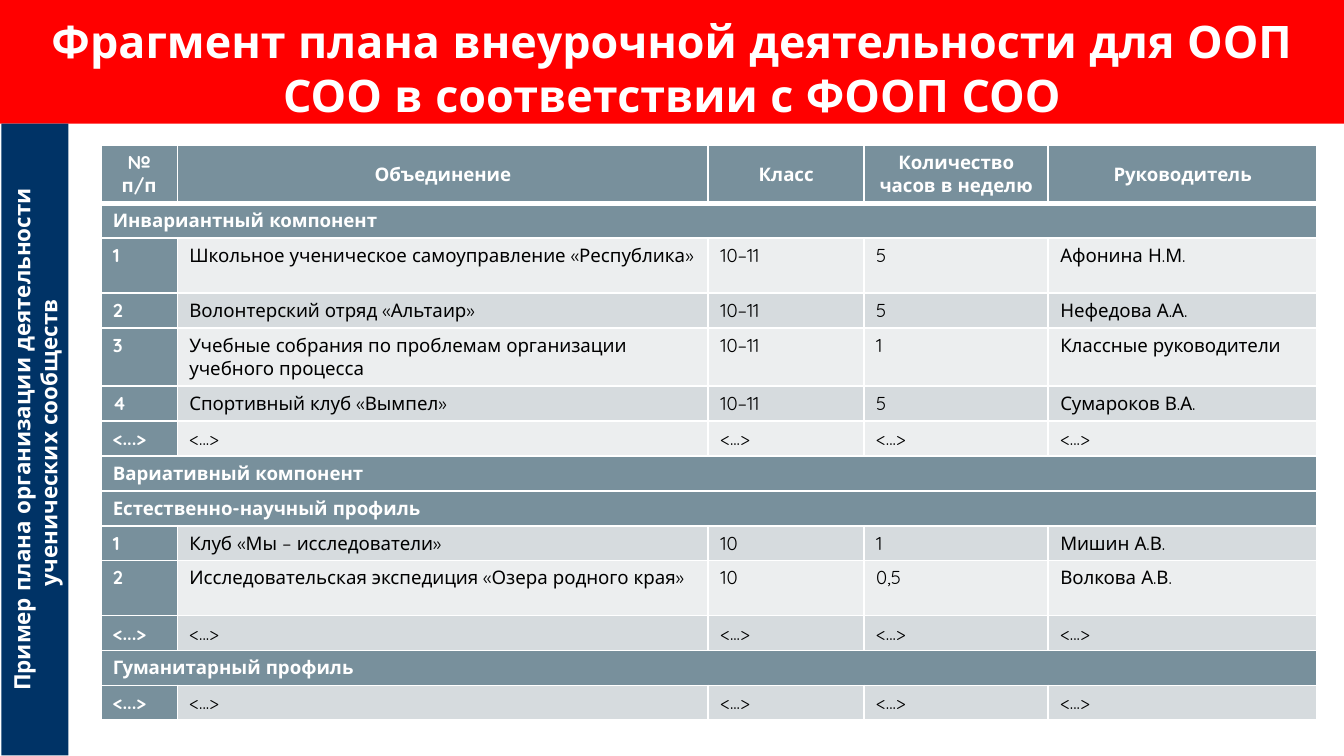
from lxml.etree import SubElement
from pptx import Presentation
from pptx.dml.color import RGBColor
from pptx.enum.shapes import MSO_SHAPE
from pptx.enum.text import MSO_ANCHOR, PP_ALIGN
from pptx.oxml.ns import qn
from pptx.util import Inches, Pt

RED = RGBColor(0xFF, 0x00, 0x00)
NAVY = RGBColor(0x00, 0x33, 0x66)
SLATE = RGBColor(0x78, 0x90, 0x9C)
LIGHT = RGBColor(0xEC, 0xEE, 0xEF)
MEDIUM = RGBColor(0xD6, 0xDB, 0xDE)
WHITE = RGBColor(0xFF, 0xFF, 0xFF)
BLACK = RGBColor(0x00, 0x00, 0x00)
FONT = "Quicksand"

TITLE = "Фрагмент плана внеурочной деятельности для ООП СОО в соответствии с ФООП СОО"
SIDEBAR = "Пример плана организации деятельности ученических сообществ "
GAP = ["<...>"] * 5
ROWS = [
    ["№ п/п", "Объединение", "Класс", "Количество часов в неделю", "Руководитель"],
    ["Инвариантный компонент"],
    ["1", "Школьное ученическое самоуправление «Республика»", "10–11", "5", "Афонина Н.М."],
    ["2", "Волонтерский отряд «Альтаир»", "10–11", "5", "Нефедова А.А."],
    ["3", "Учебные собрания по проблемам организации учебного процесса", "10–11", "1",
     "Классные руководители"],
    ["4", "Спортивный клуб «Вымпел»", "10–11", "5", "Сумароков В.А."],
    GAP,
    ["Вариативный компонент"],
    ["Естественно-научный профиль"],
    ["1", "Клуб «Мы – исследователи»", "10", "1", "Мишин А.В."],
    ["2", "Исследовательская экспедиция «Озера родного края»", "10", "0,5", "Волкова А.В."],
    GAP,
    ["Гуманитарный профиль"],
    GAP,
]
COLUMN_WIDTHS = [0.57, 3.95, 1.16, 1.37, 2]
TALL_ROWS = {0, 2, 4, 10}


def write_text(frame, text, size, color=WHITE, bold=True, align=PP_ALIGN.CENTER):
    """Write one formatted run into the first paragraph of a text frame."""
    paragraph = frame.paragraphs[0]
    paragraph.alignment = align
    run = paragraph.add_run()
    run.text = text
    run.font.name = FONT
    run.font.size = Pt(size)
    run.font.bold = bold
    run.font.color.rgb = color


def add_panel(slide, left, top, width, height, color):
    """Add a plain filled rectangle and return it."""
    shape = slide.shapes.add_shape(
        MSO_SHAPE.RECTANGLE, Inches(left), Inches(top), Inches(width), Inches(height))
    shape.shadow.inherit = False
    shape.fill.solid()
    shape.fill.fore_color.rgb = color
    shape.line.fill.background()
    shape.text_frame.word_wrap = True
    return shape


def add_title(slide, left, top, width, height):
    """Add the title band across the top."""
    frame = add_panel(slide, left, top, width, height, RED).text_frame
    frame.margin_left = frame.margin_right = Inches(0.1)
    frame.margin_top = frame.margin_bottom = Inches(0.1)
    frame.vertical_anchor = MSO_ANCHOR.TOP
    write_text(frame, TITLE, 24)


def add_sidebar(slide, left, top, width, height):
    """Add the vertical band, read from bottom to top, filling the given box."""
    shift = (height - width) / 2
    shape = add_panel(slide, left - shift, top + shift, height, width, NAVY)
    shape.rotation = 270
    shape.text_frame.vertical_anchor = MSO_ANCHOR.MIDDLE
    write_text(shape.text_frame, SIDEBAR, 12)


def set_borders(cell, bottom):
    """Draw white borders around a cell, with the given bottom width in points."""
    properties = cell._tc.get_or_add_tcPr()
    widths = {"a:lnL": 1, "a:lnR": 1, "a:lnT": 1, "a:lnB": bottom}
    for position, (tag, width) in enumerate(widths.items()):
        line = SubElement(properties, qn(tag), w=str(Pt(width)))
        fill = SubElement(line, qn("a:solidFill"))
        SubElement(fill, qn("a:srgbClr"), val=str(WHITE))
        properties.insert(position, line)


def style_cell(cell, row, column):
    """Fill a cell by its role and set its margins, anchor and borders."""
    heading = row == 0 or column == 0
    cell.fill.solid()
    cell.fill.fore_color.rgb = SLATE if heading else MEDIUM if row % 2 else LIGHT
    cell.margin_left = cell.margin_right = Inches(0.09)
    cell.margin_top = cell.margin_bottom = Pt(3.1)
    cell.vertical_anchor = MSO_ANCHOR.TOP if row else MSO_ANCHOR.MIDDLE
    set_borders(cell, 1 if row else 3)


def add_plan_table(slide, left, top):
    """Add the activity plan with merged section rows."""
    heights = [0.41 if row in TALL_ROWS else 0.25 for row in range(len(ROWS))]
    table = slide.shapes.add_table(
        len(ROWS), len(COLUMN_WIDTHS), Inches(left), Inches(top),
        Inches(sum(COLUMN_WIDTHS)), Inches(sum(heights))).table
    for column, width in zip(table.columns, COLUMN_WIDTHS):
        column.width = Inches(width)
    for row, (texts, height) in enumerate(zip(ROWS, heights)):
        table.rows[row].height = Inches(height)
        for column in range(len(COLUMN_WIDTHS)):
            style_cell(table.cell(row, column), row, column)
        if len(texts) == 1:
            table.cell(row, 0).merge(table.cell(row, len(COLUMN_WIDTHS) - 1))
        for column, text in enumerate(texts):
            heading = row == 0 or column == 0
            write_text(table.cell(row, column).text_frame, text, 10,
                       WHITE if heading else BLACK, heading,
                       PP_ALIGN.LEFT if row else PP_ALIGN.CENTER)


def main():
    """Build and save the slide."""
    presentation = Presentation()
    presentation.slide_width = Inches(10)
    presentation.slide_height = Inches(10 * 9 / 16)
    slide = presentation.slides.add_slide(presentation.slide_layouts[6])
    add_title(slide, 0, 0, 10, 0.92)
    add_plan_table(slide, 0.75, 1.08)
    add_sidebar(slide, 0.01, 0.92, 0.5, 4.7)
    presentation.save("out.pptx")


if __name__ == "__main__":
    main()
